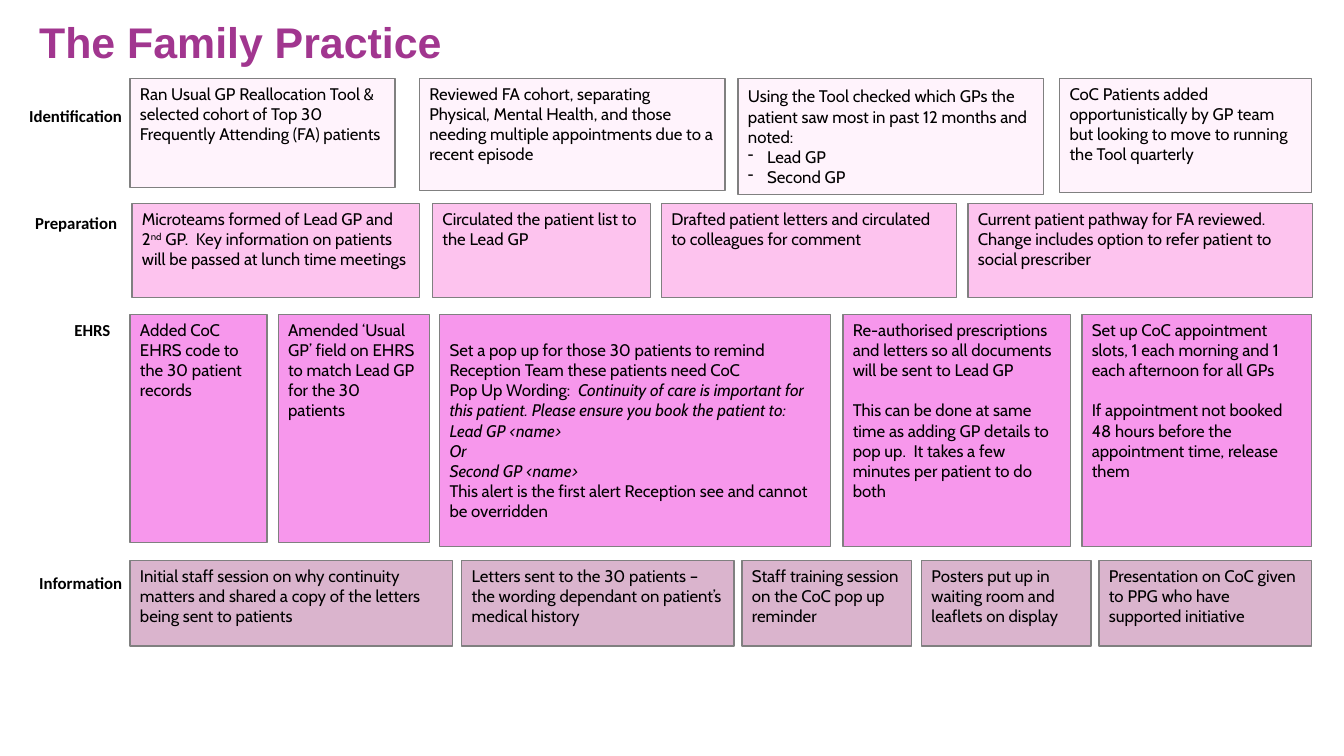
from dataclasses import dataclass

from lxml.etree import SubElement
from pptx import Presentation
from pptx.dml.color import RGBColor
from pptx.enum.shapes import MSO_SHAPE as Shape
from pptx.enum.text import MSO_ANCHOR as Anchor, MSO_AUTO_SIZE as AutoSize, PP_ALIGN as Align
from pptx.oxml.ns import qn
from pptx.util import Pt

EMU_PER_PX = 9144

PLUM = RGBColor(0xA1, 0x36, 0x8F)
BLACK = RGBColor(0, 0, 0)
GREY = RGBColor(0x80, 0x80, 0x80)
BLUSH = RGBColor(0xFF, 0xF3, 0xFC)
PINK = RGBColor(0xFD, 0xC3, 0xEE)
ORCHID = RGBColor(0xF7, 0x97, 0xEC)
MAUVE = RGBColor(0xDA, 0xB4, 0xCD)


def px(length):
    return length * EMU_PER_PX


@dataclass
class Para:
    text: str = ""
    italic: bool = False
    bullet: bool = False
    gap: bool = False
    superscript: str = ""
    tail: str = ""
    italic_tail: bool = False


@dataclass
class Step:
    left: int
    width: int
    height: int
    paras: list
    anchor: Anchor = Anchor.TOP


@dataclass
class Stage:
    label: str
    label_box: tuple
    top: int
    color: RGBColor
    steps: list


class PracticeSlide:
    step_font = "Cabin"
    label_font = "Calibri"
    title_font = "Arial"
    body_size = 12
    line_width = 1

    def __init__(self, deck):
        self.slide = deck.slides.add_slide(deck.slide_layouts[6])

    def style(self, paragraph, name, size, color, bold=False, italic=None):
        font = paragraph.font
        font.name, font.size, font.bold, font.italic = name, Pt(size), bold, italic
        font.color.rgb = color

    def text_box(self, box, text, name, size, color):
        frame = self.slide.shapes.add_textbox(*map(px, box)).text_frame
        frame.word_wrap = True
        paragraph = frame.paragraphs[0]
        paragraph.text = text
        self.style(paragraph, name, size, color, bold=True)
        return frame

    def title(self, box, text):
        frame = self.text_box(box, text, self.title_font, 30.6, PLUM)
        frame.vertical_anchor = Anchor.MIDDLE
        frame.paragraphs[0].line_spacing = 0.9

    def label(self, box, text):
        frame = self.text_box(box, text, self.label_font, self.body_size, BLACK)
        frame.auto_size = AutoSize.SHAPE_TO_FIT_TEXT

    def bullet(self, paragraph):
        properties = paragraph._p.get_or_add_pPr()
        properties.set("marL", str(px(19)))
        properties.set("indent", str(-px(19)))
        SubElement(properties, qn("a:buChar")).set("char", "-")

    def fill_paragraph(self, paragraph, para):
        paragraph.alignment = Align.LEFT
        if para.gap:
            paragraph.space_before = Pt(14.4)
        if para.bullet:
            self.bullet(paragraph)
        self.style(paragraph, self.step_font, self.body_size, BLACK, italic=para.italic or None)
        paragraph.add_run().text = para.text
        if para.superscript:
            raised = paragraph.add_run()
            raised.text = para.superscript
            raised._r.get_or_add_rPr().set("baseline", "30000")
        if para.tail:
            tail = paragraph.add_run()
            tail.text = para.tail
            if para.italic_tail:
                tail.font.italic = True

    def step(self, step, top, color):
        box = self.slide.shapes.add_shape(
            Shape.RECTANGLE, px(step.left), px(top), px(step.width), px(step.height))
        box.shadow.inherit = False
        box.fill.solid()
        box.fill.fore_color.rgb = color
        box.line.color.rgb = GREY
        box.line.width = Pt(self.line_width)
        frame = box.text_frame
        frame.word_wrap = True
        frame.vertical_anchor = step.anchor
        for index, para in enumerate(step.paras):
            self.fill_paragraph(frame.add_paragraph() if index else frame.paragraphs[0], para)

    def stage(self, stage):
        self.label(stage.label_box, stage.label)
        for step in stage.steps:
            self.step(step, stage.top, stage.color)


STAGES = [
    Stage("Identification", (19, 100, 114, 111), 78, BLUSH, [
        Step(129, 263, 108, [Para("Ran Usual GP Reallocation Tool & selected cohort of Top 30 "
                                  "Frequently Attending (FA) patients")]),
        Step(416, 303, 111, [Para("Reviewed FA cohort, separating Physical, Mental Health, and those "
                                  "needing multiple appointments due to a recent episode")]),
        Step(732, 303, 115, [
            Para("Using the Tool checked which GPs the patient saw most in past 12 months and noted:"),
            Para("Lead GP", bullet=True),
            Para("Second GP", bullet=True),
        ], Anchor.MIDDLE),
        Step(1051, 250, 113, [Para("CoC Patients added opportunistically by GP team but looking to "
                                   "move to running the Tool quarterly")]),
    ]),
    Stage("Preparation", (25, 206, 114, 71), 202, PINK, [
        Step(131, 285, 93, [Para("Microteams formed of Lead GP and 2", superscript="nd",
                                 tail=" GP.  Key information on patients will be passed at lunch "
                                      "time meetings")]),
        Step(429, 216, 93, [Para("Circulated the patient list to the Lead GP")]),
        Step(656, 293, 93, [Para("Drafted patient letters and circulated to colleagues for comment")]),
        Step(960, 342, 93, [Para("Current patient pathway for FA reviewed.  Change includes option "
                                 "to refer patient to social prescriber")]),
    ]),
    Stage("EHRS", (64, 312, 64, 71), 312, ORCHID, [
        Step(129, 136, 226, [Para("Added CoC EHRS code to the 30 patient records")]),
        Step(276, 150, 226, [Para("Amended ‘Usual GP’ field on EHRS to match Lead GP for the 30 patients")]),
        Step(436, 388, 230, [
            Para("Set a pop up for those 30 patients to remind Reception Team these patients need CoC"),
            Para("Pop Up Wording:  ", italic_tail=True,
                 tail="Continuity of care is important for this patient. Please ensure you book "
                      "the patient to:"),
            Para("Lead GP <name>", italic=True),
            Para("Or", italic=True),
            Para("Second GP <name>", italic=True),
            Para("This alert is the first alert Reception see and cannot be overridden"),
        ], Anchor.MIDDLE),
        Step(836, 226, 230, [
            Para("Re-authorised prescriptions and letters so all documents will be sent to Lead GP"),
            Para("This can be done at same time as adding GP details to pop up.  It takes a few "
                 "minutes per patient to do both", gap=True),
        ]),
        Step(1073, 228, 230, [
            Para("Set up CoC appointment slots, 1 each morning and 1 each afternoon for all GPs"),
            Para("If appointment not booked 48 hours before the appointment time, release them",
                 gap=True),
        ]),
    ]),
    Stage("Information", (29, 563, 113, 71), 556, MAUVE, [
        Step(129, 320, 85, [Para("Initial staff session on why continuity matters and shared a copy "
                                 "of the letters being sent to patients")]),
        Step(458, 270, 85, [Para("Letters sent to the 30 patients – the wording dependant on "
                                 "patient’s medical history")]),
        Step(736, 168, 85, [Para("Staff training session on the CoC pop up reminder")]),
        Step(914, 168, 85, [Para("Posters put up in waiting room and leaflets on display")]),
        Step(1090, 211, 85, [Para("Presentation on CoC given to PPG who have supported initiative")]),
    ]),
]


def main():
    deck = Presentation()
    deck.slide_width, deck.slide_height = px(1333), px(750)
    practice = PracticeSlide(deck)
    practice.title((29, 17, 1074, 55), "The Family Practice")
    for stage in STAGES:
        practice.stage(stage)
    deck.save("out.pptx")


if __name__ == "__main__":
    main()
